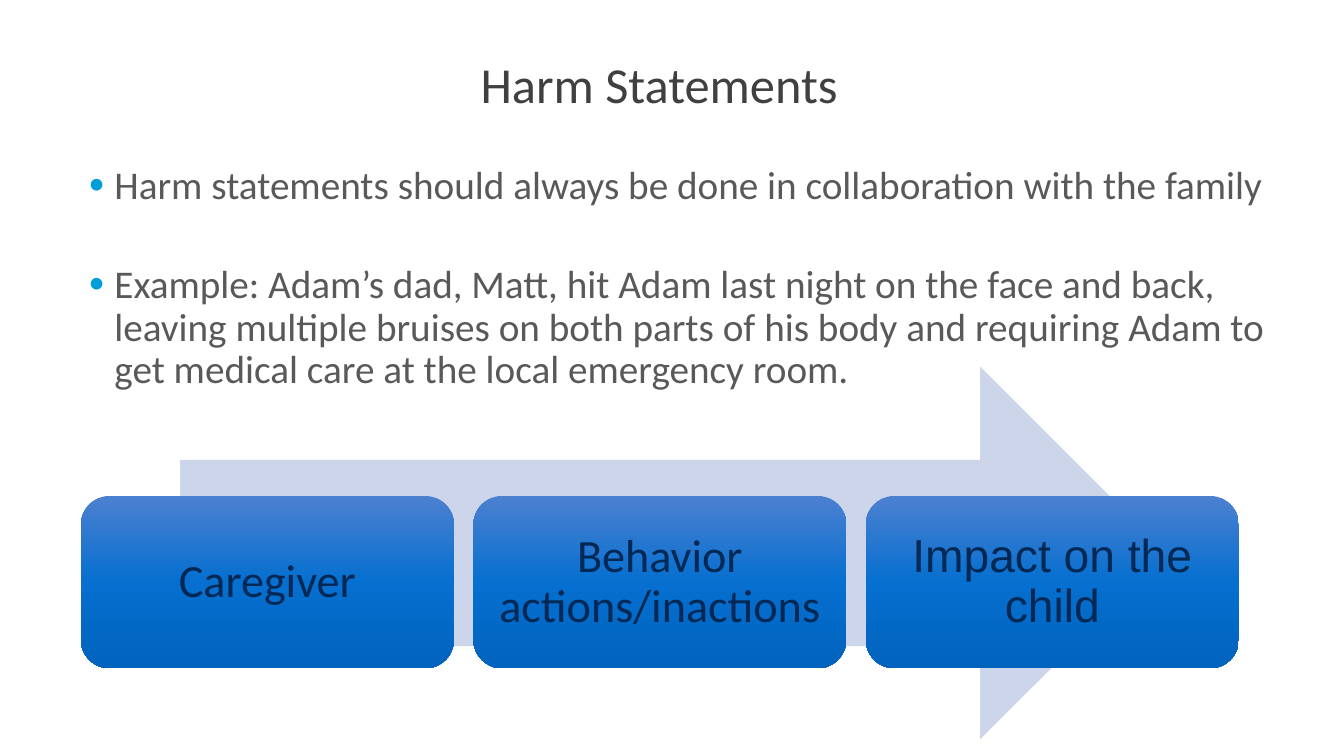
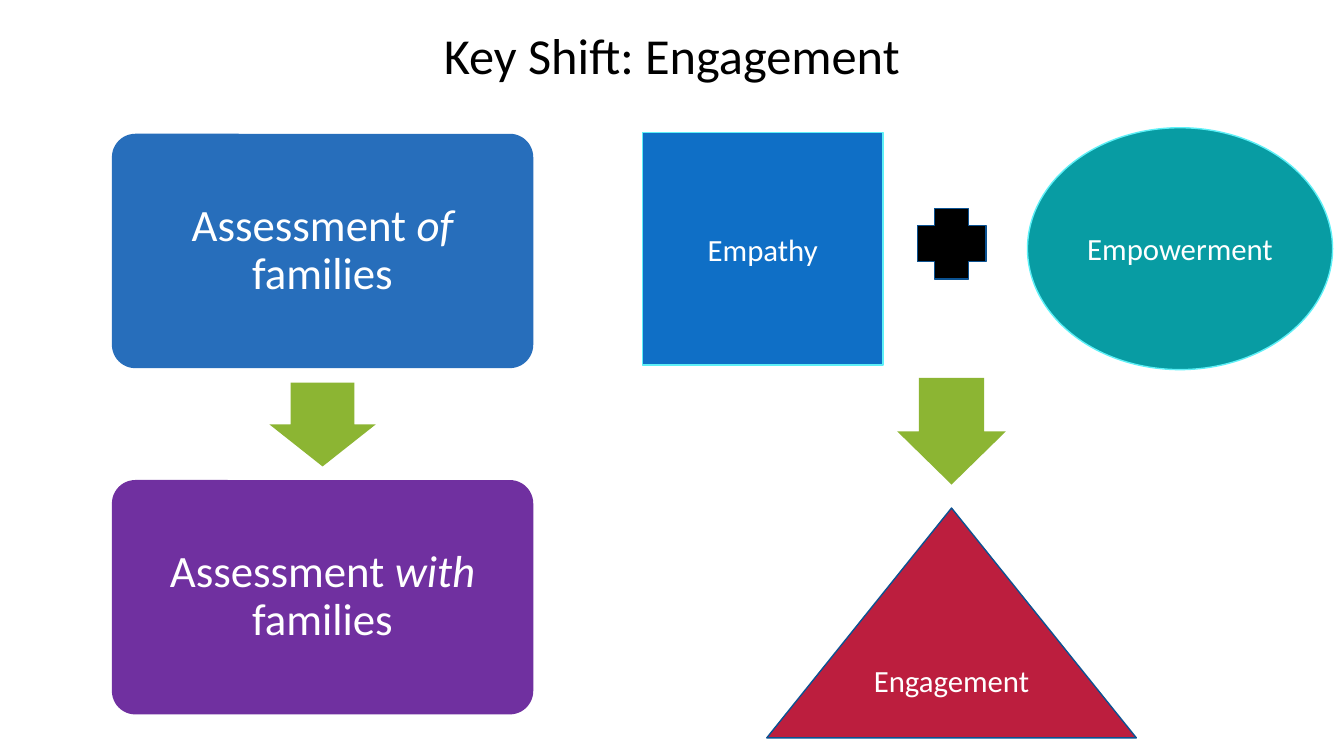
"""Build two slides on harm statements and family engagement."""
from copy import deepcopy

from lxml.etree import SubElement
from pptx import Presentation
from pptx.dml.color import RGBColor
from pptx.enum.shapes import MSO_SHAPE as Preset
from pptx.enum.text import MSO_ANCHOR as Anchor, PP_ALIGN as Align
from pptx.oxml.ns import qn
from pptx.util import Inches, Pt

WHITE, BLACK, NAVY = "FFFFFF", "000000", "002855"
CHARCOAL, GRAY = "404040", "595959"
GREEN, AQUA, EDGE_BLUE = "8CB533", "5EF0F7", "0B5292"
TITLE_SIZE = 36

presentation = Presentation()
presentation.slide_width, presentation.slide_height = Inches(13.33), Inches(7.5)
column = presentation.slide_width / 100
row = presentation.slide_height / 100


def paint(target, color):
    """Give a fill or a font one solid colour."""
    if hasattr(target, "solid"):
        target.solid()
        target.fore_color.rgb = RGBColor.from_string(color)
    else:
        target.color.rgb = RGBColor.from_string(color)


def add_block(slide, preset, box, fill=None, line=None, text="", size=22,
              color=WHITE, font="Calibri", spacing=1.0):
    """Add a shape, or a text box without preset, at centre, top, width, height."""
    center, top, width, height = box
    place = [int(column * (center - width / 2)), int(row * top),
             int(column * width), int(row * height)]
    if preset is None:
        shape = slide.shapes.add_textbox(*place)
    else:
        shape = slide.shapes.add_shape(preset, *place)
        shape.shadow.inherit = False
        shape.line.fill.background()
    if fill:
        paint(shape.fill, fill)
    if line:
        paint(shape.line.fill, line)
        shape.line.width = Pt(1)
    frame = shape.text_frame
    frame.word_wrap = True
    frame.vertical_anchor = Anchor.MIDDLE
    for index, part in enumerate(text.split("*")):
        paragraph = frame.paragraphs[0]
        paragraph.alignment = Align.CENTER
        paragraph.line_spacing = spacing
        if part:
            run = paragraph.add_run()
            run.text = part
            run.font.name, run.font.size = font, Pt(size)
            run.font.italic = index % 2 == 1
            paint(run.font, color)
    return shape


harm, shift = [presentation.slides.add_slide(presentation.slide_layouts[6])
               for _ in range(2)]

add_block(harm, None, (49.05, 1.9, 86.3, 19.3), text="Harm Statements",
          size=TITLE_SIZE, color=CHARCOAL, spacing=0.9)

body = add_block(harm, None, (51.8, 21.2, 91.8, 64.9))
body.text_frame.vertical_anchor = Anchor.TOP
body.text_frame.text = (
    "Harm statements should always be done in collaboration with the family\n"
    "Example: Adam’s dad, Matt, hit Adam last night on the face and back, "
    "leaving multiple bruises on both parts of his body and requiring Adam to "
    "get medical care at the local emergency room.")
for paragraph, gap in zip(body.text_frame.paragraphs, (0, 41)):
    paragraph.alignment = Align.LEFT
    paragraph.line_spacing = 0.9
    paragraph.space_before = Pt(gap)
    font = paragraph.runs[0].font
    font.name, font.size = "Calibri", Pt(28)
    paint(font, GRAY)
    properties = paragraph._p.get_or_add_pPr()
    indent = Inches(0.25)
    properties.set("marL", str(indent))
    properties.set("indent", str(-indent))
    bullet_color = SubElement(properties, qn("a:buClr"))
    SubElement(bullet_color, qn("a:srgbClr"), val="009DD9")
    SubElement(properties, qn("a:buSzPct"), val="110000")
    SubElement(properties, qn("a:buFont"), typeface="Arial")
    SubElement(properties, qn("a:buChar"), char="•")

add_block(harm, Preset.RIGHT_ARROW, (50.1, 48.5, 73.4, 49.3), "CCD5EA")
cards = []
for index, (text, font) in enumerate([("Caregiver", "Calibri"),
                                      ("Behavior actions/inactions", "Calibri"),
                                      ("Impact on the child", "Arial")]):
    card = add_block(harm, Preset.ROUNDED_RECTANGLE,
                     (19.9 + 29.2 * index, 65.6, 27.75, 22.8),
                     text=text, size=33, color=NAVY, font=font, spacing=0.9)
    card.fill.gradient()
    card.fill.gradient_angle = 270
    first_stop = card._element.xpath(".//a:gs")[0]
    first_stop.addnext(deepcopy(first_stop))
    for stop, position, shade in zip(card.fill.gradient_stops, (0, 0.5, 1),
                                     ("4C80D0", "066FCF", "0063BD")):
        stop.position = position
        stop.color.rgb = RGBColor.from_string(shade)
    cards.append(card)

add_block(shift, None, (50, 0, 67.5, 14.4), text="Key Shift: Engagement",
          size=TITLE_SIZE, color=BLACK)

left_center, right_center = 24, 70.8
for text, top, fill in [("Assessment *of* families", 17.7, "276EBB"),
                        ("Assessment *with* families", 63.5, "7030A0")]:
    card = add_block(shift, Preset.ROUNDED_RECTANGLE,
                     (left_center, top, 31.35, 31), fill,
                     text=text, size=32, spacing=0.9)
    card.adjustments[0] = 0.1
    cards.append(card)

for card in cards:
    frame = card.text_frame
    frame.margin_left = frame.margin_right = int(column)
    frame.margin_top = frame.margin_bottom = int(column)

for box in [(left_center, 50.6, 7.9, 11.1), (right_center, 50, 8.1, 14.1)]:
    arrow = add_block(shift, Preset.DOWN_ARROW, box, GREEN)
    arrow.adjustments[0] = 0.6
    arrow.adjustments[1] = 0.5

for preset, box, fill, line, text in [
    (Preset.RECTANGLE, (56.75, 17.5, 17.9, 30.8), "0F6FC6", AQUA, "Empathy"),
    (Preset.CROSS, (right_center, 27.6, 5.1, 9.3), BLACK, EDGE_BLUE, ""),
    (Preset.OVAL, (87.8, 16.9, 22.7, 32), "089CA3", AQUA, "Empowerment"),
    (Preset.ISOSCELES_TRIANGLE, (right_center, 67.2, 27.5, 30.4), "BC1E3E",
     EDGE_BLUE, "Engagement"),
]:
    add_block(shift, preset, box, fill, line, text)

presentation.save("out.pptx")
